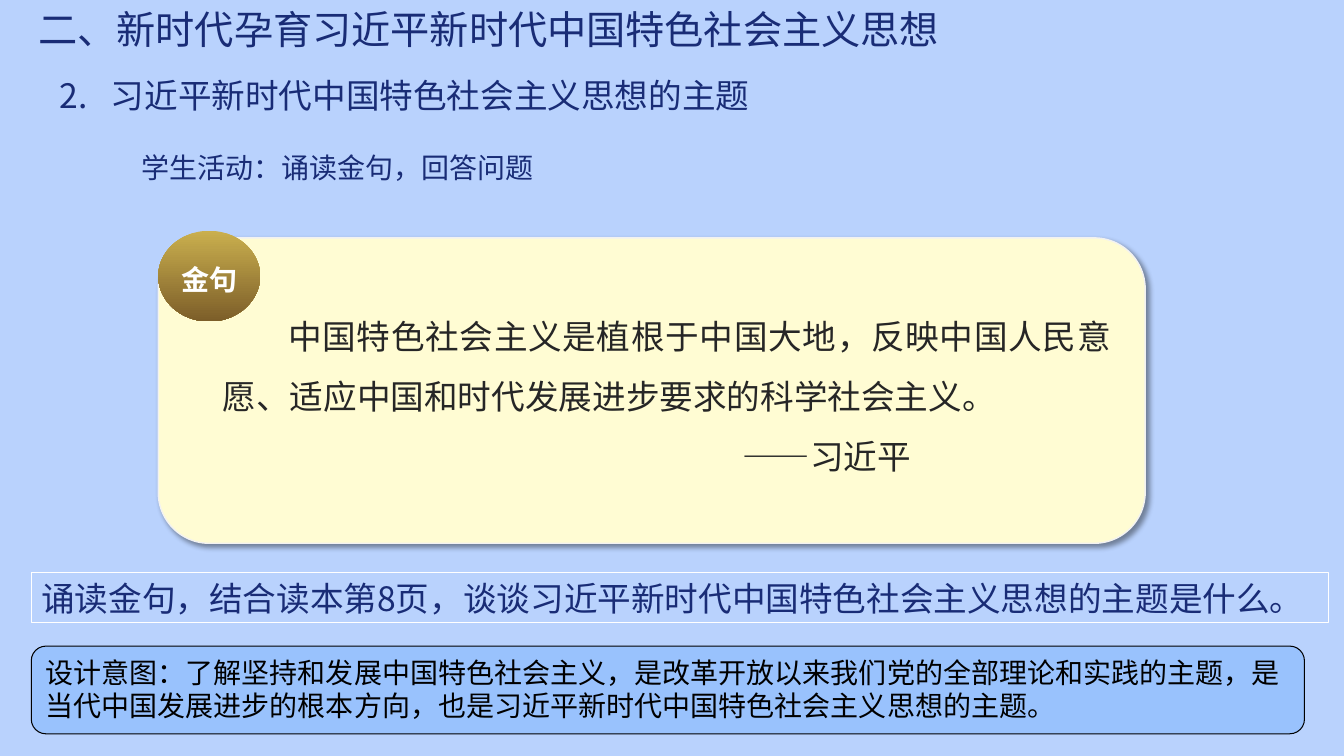
from dataclasses import dataclass, field
from typing import Optional

from lxml import etree
from pptx import Presentation
from pptx.dml.color import RGBColor
from pptx.enum.shapes import MSO_SHAPE
from pptx.enum.text import MSO_ANCHOR, MSO_AUTO_SIZE, PP_ALIGN
from pptx.oxml.ns import qn
from pptx.util import Inches, Pt

RECTANGLE = MSO_SHAPE.RECTANGLE
ROUNDED = MSO_SHAPE.ROUNDED_RECTANGLE
OVAL = MSO_SHAPE.OVAL
TOP, MIDDLE = MSO_ANCHOR.TOP, MSO_ANCHOR.MIDDLE
LEFT, CENTER, JUSTIFY = PP_ALIGN.LEFT, PP_ALIGN.CENTER, PP_ALIGN.JUSTIFY

WIDTH, HEIGHT = Inches(13.33), Inches(7.5)
COLUMN, ROW = WIDTH / 100, HEIGHT / 100
TITLE_ONLY = 5
FONT = "Noto Sans CJK SC"
COLORS = {
    "background": "B9D2FD",
    "navy": "192C76",
    "cream": "FFFCD3",
    "edge": "F2F2F2",
    "ink": "262626",
    "white": "FFFFFF",
    "black": "000000",
    "sky": "99C2FD",
    "gold": "CAAF4E",
    "bronze": "7C5E29",
}


@dataclass
class Line:
    text: str
    size: int
    color: str = "navy"
    bold: bool = False
    align: PP_ALIGN = LEFT
    spacing: float = 1.0
    margin: float = 0
    indent: float = 0


@dataclass
class Block:
    column: float
    row: float
    columns: float
    rows: float
    lines: list[Line] = field(default_factory=list)
    preset: Optional[MSO_SHAPE] = None
    fill: tuple[str, ...] = ()
    outline: str = ""
    outline_width: float = 0.75
    anchor: MSO_ANCHOR = TOP
    inset_x: float = 0.1
    inset_y: float = 0.05
    shadow: bool = False


TITLE = Block(1.35, 0, 71.63, 7.6, [
    Line("二、新时代孕育习近平新时代中国特色社会主义思想", 28, indent=0.1)])

BLOCKS = [
    Block(2.33, 75.73, 96.53, 6.67, [
        Line("诵读金句，结合读本第8页，谈谈习近平新时代中国特色社会主义思想的主题是什么。", 24)],
        RECTANGLE, outline="white"),
    Block(11.78, 31.47, 73.43, 40.4, [], ROUNDED, ("cream",), "edge", 1, shadow=True),
    Block(15.83, 38.4, 67.58, 34, [
        Line("中国特色社会主义是植根于中国大地，反映中国人民意愿、适应中国和时代发展进步要求的科学社会主义。",
             24, "ink", align=JUSTIFY, spacing=1.5, indent=0.65),
        Line("——习近平", 24, "ink", align=JUSTIFY, spacing=1.5, indent=5.16)]),
    Block(11.78, 30.53, 7.58, 12, [
        Line("金句", 20, "white", True, CENTER, 1.2)],
        OVAL, ("gold", "bronze"), anchor=MIDDLE, inset_x=0.07, inset_y=0.03),
    Block(2.33, 85.47, 94.73, 11.6, [
        Line("设计意图：了解坚持和发展中国特色社会主义，是改革开放以来我们党的全部理论和实践的主题，"
             "是当代中国发展进步的根本方向，也是习近平新时代中国特色社会主义思想的主题。", 20, "black")],
        ROUNDED, ("sky",), "black"),
    Block(0.83, 9.2, 81.23, 6.67, [
        Line("2.\t习近平新时代中国特色社会主义思想的主题", 24, margin=0.89, indent=-0.51)]),
    Block(4.13, 19.2, 80.25, 5.87, [
        Line("学生活动：诵读金句，回答问题", 20, indent=0.75)]),
]


def rgb(name: str) -> RGBColor:
    return RGBColor.from_string(COLORS[name])


def apply(target, values: dict) -> None:
    for name, value in values.items():
        setattr(target, name, value)


def place(shape, block: Block) -> None:
    apply(shape, {
        "left": round(block.column * COLUMN),
        "top": round(block.row * ROW),
        "width": round(block.columns * COLUMN),
        "height": round(block.rows * ROW),
    })


def write(shape, block: Block) -> None:
    frame = shape.text_frame
    apply(frame, {
        "auto_size": MSO_AUTO_SIZE.NONE,
        "word_wrap": True,
        "vertical_anchor": block.anchor,
        "margin_left": Inches(block.inset_x),
        "margin_right": Inches(block.inset_x),
        "margin_top": Inches(block.inset_y),
        "margin_bottom": Inches(block.inset_y),
    })
    for index, line in enumerate(block.lines):
        paragraph = frame.add_paragraph() if index else frame.paragraphs[0]
        apply(paragraph, {
            "alignment": line.align,
            "line_spacing": line.spacing,
            "space_before": Pt(0),
        })
        properties = paragraph._p.get_or_add_pPr()
        properties.set("marL", str(Inches(line.margin)))
        properties.set("indent", str(Inches(line.indent)))
        run = paragraph.add_run()
        run.text = line.text
        apply(run.font, {"name": FONT, "size": Pt(line.size), "bold": line.bold})
        run.font.color.rgb = rgb(line.color)
        east_asian = etree.SubElement(run._r.get_or_add_rPr(), qn("a:ea"))
        east_asian.set("typeface", FONT)


def add_shadow(shape) -> None:
    effects = shape._element.spPr.find(qn("a:effectLst"))
    shadow = etree.SubElement(effects, qn("a:outerShdw"), {
        "blurRad": str(Pt(4)), "dist": str(Pt(3)), "dir": "2700000",
        "algn": "tl", "rotWithShape": "0"})
    color = etree.SubElement(shadow, qn("a:srgbClr"), {"val": COLORS["black"]})
    etree.SubElement(color, qn("a:alpha"), {"val": "40000"})


def paint(shape, block: Block) -> None:
    shape.shadow.inherit = False
    if len(block.fill) == 2:
        shape.fill.gradient()
        shape.fill.gradient_angle = 270
        for position, (stop, name) in enumerate(zip(shape.fill.gradient_stops, block.fill)):
            stop.position = position
            stop.color.rgb = rgb(name)
    elif block.fill:
        shape.fill.solid()
        shape.fill.fore_color.rgb = rgb(block.fill[0])
    else:
        shape.fill.background()
    if block.outline:
        shape.line.color.rgb = rgb(block.outline)
        shape.line.width = Pt(block.outline_width)
    else:
        shape.line.fill.background()
    if block.shadow:
        add_shadow(shape)


def draw(slide, block: Block) -> None:
    if block.preset is None:
        shape = slide.shapes.add_textbox(0, 0, 0, 0)
    else:
        shape = slide.shapes.add_shape(block.preset, 0, 0, 0, 0)
        paint(shape, block)
    place(shape, block)
    write(shape, block)


def main() -> None:
    presentation = Presentation()
    apply(presentation, {"slide_width": WIDTH, "slide_height": HEIGHT})
    slide = presentation.slides.add_slide(presentation.slide_layouts[TITLE_ONLY])
    slide.background.fill.solid()
    slide.background.fill.fore_color.rgb = rgb("background")
    place(slide.shapes.title, TITLE)
    write(slide.shapes.title, TITLE)
    for block in BLOCKS:
        draw(slide, block)
    presentation.save("out.pptx")


if __name__ == "__main__":
    main()
